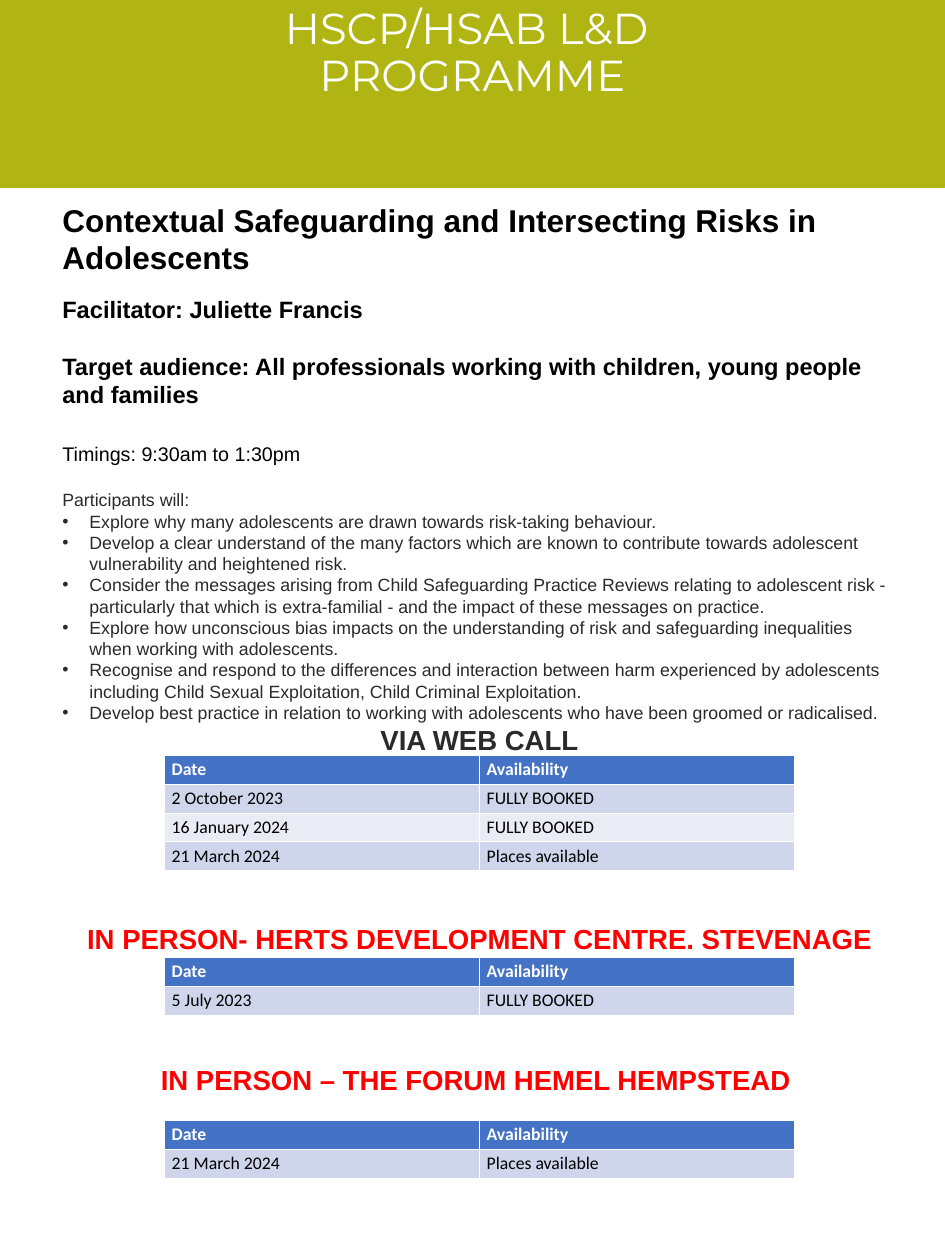
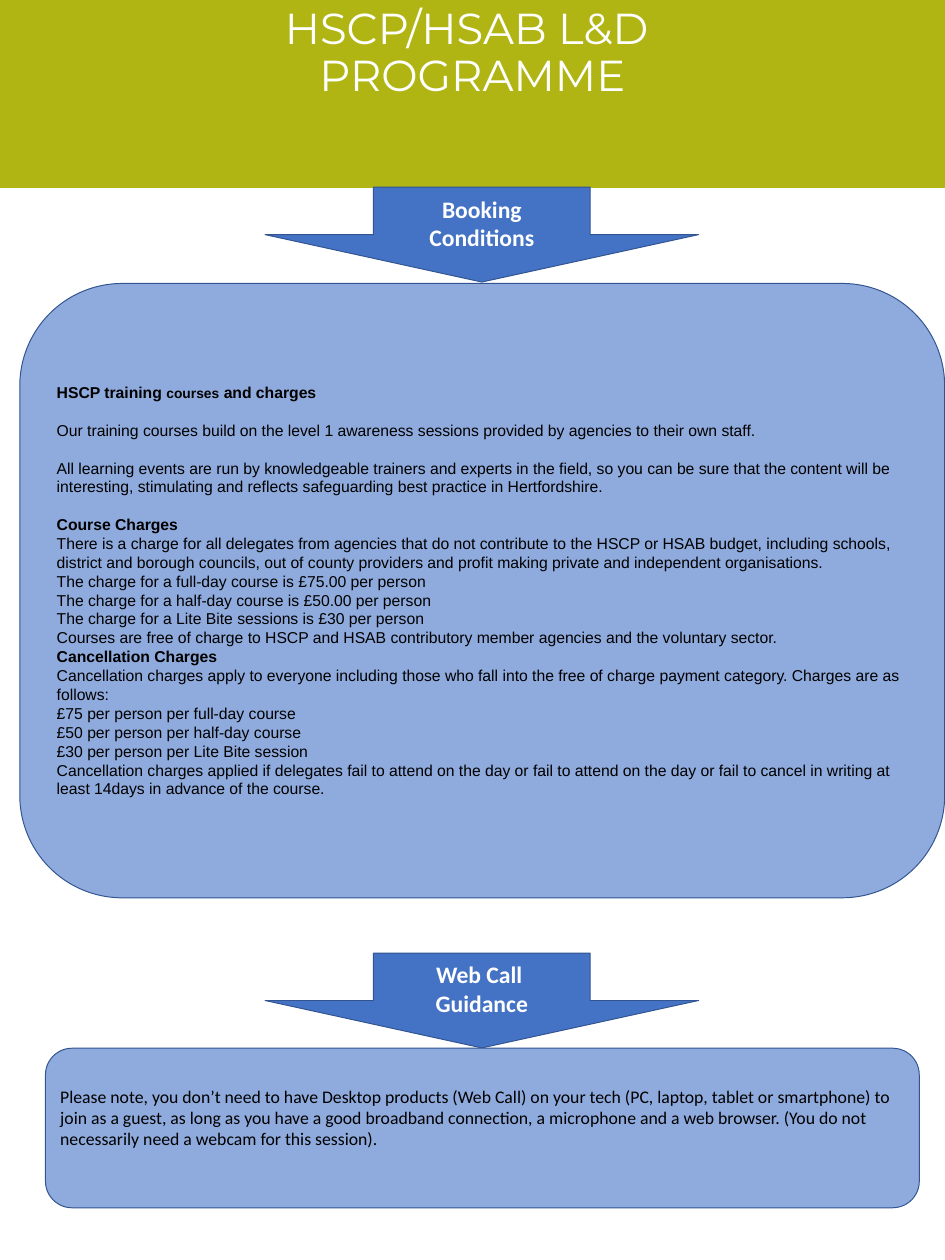
from dataclasses import dataclass

from lxml import etree
from pptx import Presentation
from pptx import util as u
from pptx.dml.color import RGBColor
from pptx.enum import shapes as sh
from pptx.enum import text as tx
from pptx.oxml import ns
from pptx.slide import Slide

# Shared look
WIDE, HIGH = 33.87, 45.16
BAND_END = 6.71
HUES = {
    "band": "B1B514", "white": "FFFFFF", "black": "000000", "grey": "2A2A2A",
    "red": "FF0000", "blue": "4472C4", "edge": "325491", "pale": "8FAADC",
    "odd": "CFD5EA", "even": "E9EBF5",
}
LEFT, MID = tx.PP_ALIGN.LEFT, tx.PP_ALIGN.CENTER


@dataclass
class Run:
    text: str
    size: float = 18
    bold: bool = False
    hue: str = "black"
    face: str = "Arial"


@dataclass
class Para:
    runs: list[Run]
    gap: float = 0
    align: tx.PP_ALIGN = LEFT
    dot: bool = False


@dataclass
class Box:
    kind: sh.MSO_SHAPE
    left: float
    top: float
    width: float
    height: float
    fill: str
    edge: str


@dataclass
class Grid:
    top: float
    rows: list[tuple[str, str]]


def tint(name: str) -> RGBColor:
    return RGBColor.from_string(HUES[name])


def place(shape, left: float, top: float, width: float, height: float) -> None:
    shape.left, shape.top = u.Cm(left), u.Cm(top)
    shape.width, shape.height = u.Cm(width), u.Cm(height)


def add_run(par, run: Run) -> None:
    part = par.add_run()
    part.text = run.text
    font = part.font
    font.name, font.size, font.bold = run.face, u.Pt(run.size), run.bold
    font.color.rgb = tint(run.hue)


def set_dot(par, dot: bool) -> None:
    props = par._p.get_or_add_pPr()
    indent = u.Cm(0.97) if dot else 0
    props.set("marL", str(indent))
    props.set("indent", str(-indent))
    if dot:
        etree.SubElement(props, ns.qn("a:buFont")).set("typeface", "Arial")
        etree.SubElement(props, ns.qn("a:buChar")).set("char", "•")
    else:
        etree.SubElement(props, ns.qn("a:buNone"))


def write(frame, paras: list[Para]) -> None:
    frame.word_wrap = True
    frame.auto_size = tx.MSO_AUTO_SIZE.NONE
    for i, item in enumerate(paras):
        par = frame.add_paragraph() if i else frame.paragraphs[0]
        set_dot(par, item.dot)
        par.alignment = item.align
        par.space_before, par.space_after = u.Pt(item.gap), u.Pt(0)
        for run in item.runs:
            add_run(par, run)


def add_box(slide: Slide, box: Box):
    shape = slide.shapes.add_shape(
        box.kind, u.Cm(box.left), u.Cm(box.top), u.Cm(box.width), u.Cm(box.height))
    shape.shadow.inherit = False
    shape.fill.solid()
    shape.fill.fore_color.rgb = tint(box.fill)
    shape.line.color.rgb = tint(box.edge)
    shape.line.width = u.Pt(1)
    shape.text_frame.vertical_anchor = tx.MSO_ANCHOR.MIDDLE
    return shape


def add_head(slide: Slide) -> None:
    """Green band at the back with the programme title over it."""
    band = add_box(slide, Box(sh.MSO_SHAPE.RECTANGLE, 0, 0, WIDE, BAND_END, "band", "band"))
    slide.shapes.element.insert(2, band.element)
    title = slide.shapes.title
    place(title, 0, 0.13, WIDE, 5.74)
    frame = title.text_frame
    frame.vertical_anchor = tx.MSO_ANCHOR.TOP
    look = {"size": 44, "hue": "white", "face": "Montserrat"}
    write(frame, [Para([Run("HSCP/HSAB L&D ", **look)], align=MID)])
    par = frame.paragraphs[0]
    par.line_spacing = 0.9
    par.add_line_break()
    add_run(par, Run("PROGRAMME", **look))


def add_grid(slide: Slide, grid: Grid) -> None:
    rows = [("Date", "Availability"), *grid.rows]
    step, width = 1.03, 22.58
    table = slide.shapes.add_table(
        len(rows), 2, u.Cm(5.9), u.Cm(grid.top), u.Cm(width), u.Cm(step * len(rows))).table
    for r, row in enumerate(rows):
        table.rows[r].height = u.Cm(step)
        fill = "blue" if r == 0 else "odd" if r % 2 else "even"
        for c, word in enumerate(row):
            cell = table.cell(r, c)
            cell.fill.solid()
            cell.fill.fore_color.rgb = tint(fill)
            hue = "black" if r else "white"
            add_run(cell.text_frame.paragraphs[0], Run(word, 18, r == 0, hue, "Calibri"))


def add_arrow(slide: Slide, top: float, lines: list[str]) -> None:
    box = Box(sh.MSO_SHAPE.DOWN_ARROW, 9.5, top, 15.54, 3.4, "blue", "edge")
    paras = [Para([Run(line, 24, True, "white", "Calibri")], align=MID) for line in lines]
    write(add_box(slide, box).text_frame, paras)


# Course slide
AIMS = [
    "Explore why many adolescents are drawn towards risk-taking behaviour.",
    "Develop a clear understand of the many factors which are known to contribute "
    "towards adolescent vulnerability and heightened risk.",
    "Consider the messages arising from Child Safeguarding Practice Reviews relating to "
    "adolescent risk - particularly that which is extra-familial - and the impact of these "
    "messages on practice.",
    "Explore how unconscious bias impacts on the understanding of risk and safeguarding "
    "inequalities when working with adolescents.",
    "Recognise and respond to the differences and interaction between harm experienced by "
    "adolescents including Child Sexual Exploitation, Child Criminal Exploitation.",
    "Develop best practice in relation to working with adolescents who have been groomed "
    "or radicalised.",
]
COURSE = [
    Para([Run("Contextual Safeguarding and Intersecting Risks in Adolescents", 32, True)]),
    Para([Run("Facilitator: Juliette Francis", 24, True)], 19),
    Para([Run("Target audience: All professionals working with children, young people "
              "and families", 24, True)], 29),
    Para([Run("Timings: 9:30am to 1:30pm", 20)], 34),
    Para([Run("Participants will:", hue="grey")], 24),
    *[Para([Run(aim, hue="grey")], dot=True) for aim in AIMS],
    Para([Run("VIA WEB CALL", 28, True, "grey")], align=MID),
    Para([Run("IN PERSON- HERTS DEVELOPMENT CENTRE. STEVENAGE", 28, True, "red")], 168, MID),
    Para([Run("IN PERSON – THE FORUM HEMEL HEMPSTEAD ", 28, True, "red")], 110, MID),
]
FULL, FREE = "FULLY BOOKED", "Places available"
GRIDS = [
    Grid(27.08, [("2 October 2023", FULL), ("16 January 2024", FULL), ("21 March 2024", FREE)]),
    Grid(34.32, [("5 July 2023", FULL)]),
    Grid(40.16, [("21 March 2024", FREE)]),
]


def add_course(deck) -> None:
    slide = deck.slides.add_slide(deck.slide_layouts[1])
    add_head(slide)
    body = slide.placeholders[1]
    place(body, 1.98, 7.06, 30.4, 35.66)
    body.text_frame.vertical_anchor = tx.MSO_ANCHOR.TOP
    write(body.text_frame, COURSE)
    for grid in GRIDS:
        add_grid(slide, grid)


# Booking slide
def plain(text: str, gap: float = 0) -> Para:
    return Para([Run(text, 16)], gap)


def strong(text: str, gap: float = 0) -> Para:
    return Para([Run(text, 16, True)], gap)


LINE = 19
TERMS = [
    Para([Run("HSCP training ", 16, True), Run("courses", 14, True),
          Run(" and charges", 16, True)]),
    plain("Our training courses build on the level 1 awareness sessions provided by agencies "
          "to their own staff.", LINE),
    plain("All learning events are run by knowledgeable trainers and experts in the field, so "
          "you can be sure that the content will be interesting, stimulating and reflects "
          "safeguarding best practice in Hertfordshire.", LINE),
    strong("Course Charges", LINE),
    plain("There is a charge for all delegates from agencies that do not contribute to the "
          "HSCP or HSAB budget, including schools, district and borough councils, out of "
          "county providers and profit making private and independent organisations."),
    plain("The charge for a full-day course is £75.00 per person"),
    plain("The charge for a half-day course is £50.00 per person"),
    plain("The charge for a Lite Bite sessions is £30 per person"),
    plain("Courses are free of charge to HSCP and HSAB contributory member agencies and the "
          "voluntary sector."),
    strong("Cancellation Charges"),
    plain("Cancellation charges apply to everyone including those who fall into the free of "
          "charge payment category. Charges are as follows:"),
    plain("£75 per person per full-day course"),
    plain("£50 per person per half-day course"),
    plain("£30 per person per Lite Bite session"),
    plain("Cancellation charges applied if delegates fail to attend on the day or fail to "
          "attend on the day or fail to cancel in writing at least 14days in advance of the "
          "course."),
]
GUIDE = [Para([Run(
    "Please note, you don’t need to have Desktop products (Web Call) on your tech (PC, laptop, "
    "tablet or smartphone) to join as a guest, as long as you have a good broadband "
    "connection, a microphone and a web browser. (You do not necessarily need a webcam for "
    "this session).", face="Calibri")])]


def add_terms(deck) -> None:
    slide = deck.slides.add_slide(deck.slide_layouts[5])
    add_head(slide)
    round_box = sh.MSO_SHAPE.ROUNDED_RECTANGLE
    add_arrow(slide, BAND_END, ["Booking", "Conditions"])
    terms = add_box(slide, Box(round_box, 0.71, 10.16, 33.15, 22.02, "pale", "edge"))
    write(terms.text_frame, TERMS)
    add_arrow(slide, 34.16, ["Web Call ", "Guidance"])
    guide = add_box(slide, Box(round_box, 1.63, 37.57, 31.32, 5.72, "pale", "edge"))
    guide.text_frame.margin_bottom = u.Cm(0.9)
    write(guide.text_frame, GUIDE)


def main() -> None:
    deck = Presentation()
    deck.slide_width, deck.slide_height = u.Cm(WIDE), u.Cm(HIGH)
    add_course(deck)
    add_terms(deck)
    deck.save("out.pptx")


if __name__ == "__main__":
    main()
